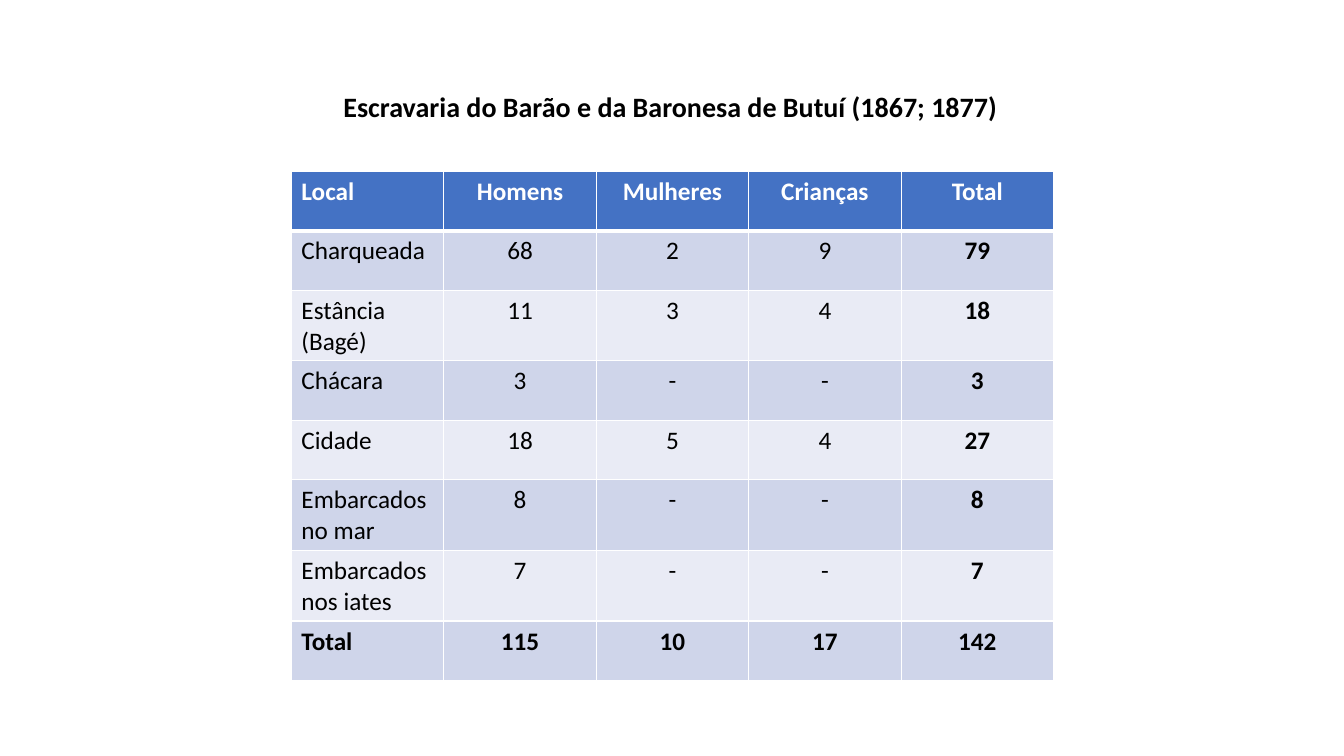
from dataclasses import dataclass

from lxml import etree
from pptx import Presentation
from pptx.dml.color import RGBColor
from pptx.enum.text import MSO_ANCHOR, MSO_AUTO_SIZE, PP_ALIGN
from pptx.oxml.ns import qn
from pptx.util import Inches, Pt

LEFT, CENTER = PP_ALIGN.LEFT, PP_ALIGN.CENTER
TOP = MSO_ANCHOR.TOP
FIT_SHAPE = MSO_AUTO_SIZE.SHAPE_TO_FIT_TEXT

FONT = "Calibri"
BLACK, WHITE = "000000", "FFFFFF"
HEADER_FILL = "4472C4"
BAND_FILLS = ("CFD5EA", "E9EBF5")
TITLE = "Escravaria do Barão e da Baronesa de Butuí (1867; 1877)"
HEADERS = ("Local", "Homens", "Mulheres", "Crianças", "Total")
TABLE_WIDTH, ROW_HEIGHT = 7.56, 0.59
THIN, THICK = 1, 3


@dataclass(frozen=True)
class Place:
    name: str
    men: str
    women: str
    children: str
    total: str

    def values(self) -> tuple[str, ...]:
        return self.name, self.men, self.women, self.children, self.total


PLACES = (
    Place("Charqueada", "68", "2", "9", "79"),
    Place("Estância (Bagé)", "11", "3", "4", "18"),
    Place("Chácara", "3", "-", "-", "3"),
    Place("Cidade", "18", "5", "4", "27"),
    Place("Embarcados no mar", "8", "-", "-", "8"),
    Place("Embarcados nos iates", "7", "-", "-", "7"),
    Place("Total", "115", "10", "17", "142"),
)


def rgb(value: str) -> RGBColor:
    return RGBColor.from_string(value)


def write(text_frame, text: str, size: float, color: str, bold: bool, alignment) -> None:
    paragraph = text_frame.paragraphs[0]
    paragraph.alignment = alignment
    run = paragraph.add_run()
    run.text = text
    for name, value in {"name": FONT, "size": Pt(size), "bold": bold}.items():
        setattr(run.font, name, value)
    run.font.color.rgb = rgb(color)


def add_borders(cell, top: float, bottom: float) -> None:
    """Draw white cell borders; must run before the cell is filled."""
    properties = cell._tc.get_or_add_tcPr()
    for side, width in {"L": THIN, "R": THIN, "T": top, "B": bottom}.items():
        line = etree.SubElement(properties, qn(f"a:ln{side}"), w=str(Pt(width)))
        fill = etree.SubElement(line, qn("a:solidFill"))
        etree.SubElement(fill, qn("a:srgbClr"), val=WHITE)


def add_title(slide) -> None:
    title = slide.shapes.title
    box = {"left": 3.28, "top": 0.84, "width": 6.74, "height": 0.44}
    for name, value in box.items():
        setattr(title, name, Inches(value))
    frame_format = {"word_wrap": False, "auto_size": FIT_SHAPE, "vertical_anchor": TOP}
    for name, value in frame_format.items():
        setattr(title.text_frame, name, value)
    write(title.text_frame, TITLE, 20, BLACK, True, CENTER)


def add_places_table(slide) -> None:
    rows = [HEADERS, *(place.values() for place in PLACES)]
    table = slide.shapes.add_table(
        len(rows), len(HEADERS), Inches(2.89), Inches(1.7),
        Inches(TABLE_WIDTH), Inches(ROW_HEIGHT * len(rows)),
    ).table
    last_row, last_column = len(rows) - 1, len(HEADERS) - 1
    for row_index, values in enumerate(rows):
        is_header = row_index == 0
        fill = HEADER_FILL if is_header else BAND_FILLS[(row_index - 1) % 2]
        for column_index, text in enumerate(values):
            cell = table.cell(row_index, column_index)
            add_borders(
                cell,
                top=THICK if row_index == 1 else THIN,
                bottom=THICK if is_header else THIN,
            )
            cell.fill.solid()
            cell.fill.fore_color.rgb = rgb(fill)
            bold = row_index in (0, last_row) or column_index == last_column
            write(cell.text_frame, text, 18, WHITE if is_header else BLACK, bold,
                  CENTER if column_index else LEFT)


def main() -> None:
    presentation = Presentation()
    presentation.slide_width = Inches(13.33)
    presentation.slide_height = Inches(7.5)
    title_only = presentation.slide_layouts[5]
    slide = presentation.slides.add_slide(title_only)
    add_title(slide)
    add_places_table(slide)
    presentation.save("out.pptx")


if __name__ == "__main__":
    main()
